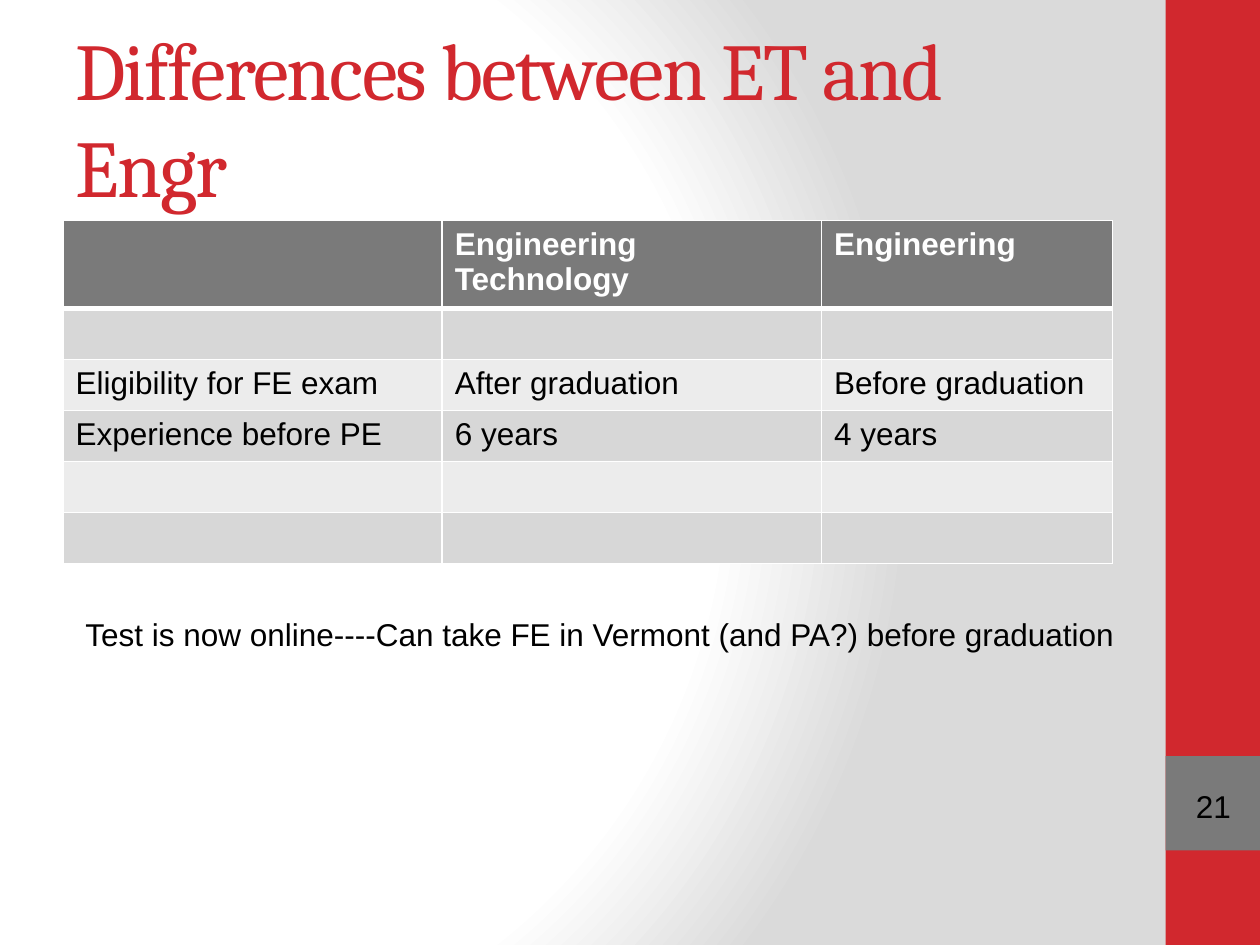
from typing import NamedTuple

from pptx import Presentation
from pptx.dml.color import RGBColor
from pptx.enum.shapes import MSO_SHAPE
from pptx.enum.text import MSO_ANCHOR, PP_ALIGN
from pptx.oxml import parse_xml
from pptx.oxml.ns import nsdecls
from pptx.util import Inches, Pt

COLORS = {
    "red": "D1282E", "gray": "7A7A7A", "white": "FFFFFF", "black": "000000",
    "backdrop": "DADADA", "dark_band": "D7D7D7", "light_band": "ECECEC",
}


class Box(NamedTuple):
    left: float
    top: float
    width: float
    height: float

    def lengths(self) -> list:
        return [Inches(v) for v in self]


class Style(NamedTuple):
    size: float = 18
    font: str = "Arial"
    color: str = "black"
    bold: bool = False


BODY = Style()
HEADER = Style(color="white", bold=True)
TITLE = Style(46, "Cambria", "red")

COLUMN_WIDTHS = (3.01, 3.01, 2.31)
ROWS = (
    ("", "Engineering Technology", "Engineering"),
    ("", "", ""),
    ("Eligibility for FE exam", "After graduation", "Before graduation"),
    ("Experience before PE", "6 years", "4 years"),
    ("", "", ""),
    ("", "", ""),
)


def rgb(name: str) -> RGBColor:
    return RGBColor.from_string(COLORS[name])


def write(tf, text: str, style: Style):
    p = tf.paragraphs[0]
    p.text = text
    p.font.size, p.font.name, p.font.bold = Pt(style.size), style.font, style.bold
    p.font.color.rgb = rgb(style.color)
    return p


def set_background(s) -> None:
    """Fill the slide with a circular gradient centred left of the middle."""
    stops = "".join(
        f'<a:gs pos="{pos * 1000}"><a:srgbClr val="{COLORS[name]}"/></a:gs>'
        for pos, name in ((0, "white"), (75, "white"), (100, "backdrop")))
    s._element.cSld.insert(0, parse_xml(
        f'<p:bg {nsdecls("p", "a")}><p:bgPr><a:gradFill rotWithShape="1">'
        f'<a:gsLst>{stops}</a:gsLst><a:path path="circle">'
        '<a:fillToRect l="20000" t="50000" r="100000" b="50000"/></a:path>'
        '</a:gradFill><a:effectLst/></p:bgPr></p:bg>'))


def add_panel(s, box: Box, color: str) -> None:
    sp = s.shapes.add_shape(MSO_SHAPE.RECTANGLE, *box.lengths())
    sp.shadow.inherit = False
    sp.fill.solid()
    sp.fill.fore_color.rgb = rgb(color)
    sp.line.fill.background()


def add_text(s, box: Box, text: str, style: Style, anchor=MSO_ANCHOR.TOP):
    tf = s.shapes.add_textbox(*box.lengths()).text_frame
    tf.word_wrap = True
    tf.vertical_anchor = anchor
    return write(tf, text, style)


def add_page_number(s, box: Box, text: str) -> None:
    sp = s.shapes.add_shape(MSO_SHAPE.DOUBLE_BRACKET, *box.lengths())
    sp.shadow.inherit = False
    sp.adjustments[0] = 0.18
    sp.fill.background()
    sp.line.fill.background()
    tf = sp.text_frame
    tf.margin_left = tf.margin_right = tf.margin_top = tf.margin_bottom = 0
    tf.vertical_anchor = MSO_ANCHOR.MIDDLE
    write(tf, text, BODY).alignment = PP_ALIGN.CENTER


def set_borders(cell, bottom: float, top: float) -> None:
    tcPr = cell._tc.get_or_add_tcPr()
    sides = {"lnL": 1, "lnR": 1, "lnT": top, "lnB": bottom}
    for i, (side, width) in enumerate(sides.items()):
        tcPr.insert(i, parse_xml(
            f'<a:{side} {nsdecls("a")} w="{Pt(width)}"><a:solidFill>'
            f'<a:srgbClr val="{COLORS["white"]}"/></a:solidFill></a:{side}>'))


def add_comparison_table(s, box: Box) -> None:
    table = s.shapes.add_table(len(ROWS), len(COLUMN_WIDTHS), *box.lengths()).table
    for column, width in zip(table.columns, COLUMN_WIDTHS):
        column.width = Inches(width)
    for i, row in enumerate(ROWS):
        fill = "gray" if i == 0 else "dark_band" if i % 2 else "light_band"
        for j, text in enumerate(row):
            cell = table.cell(i, j)
            cell.fill.solid()
            cell.fill.fore_color.rgb = rgb(fill)
            set_borders(cell, bottom=3 if i == 0 else 1, top=3 if i == 1 else 1)
            write(cell.text_frame, text, BODY if i else HEADER)


def main() -> None:
    prs = Presentation()
    prs.slide_width, prs.slide_height = Inches(10), Inches(7.5)
    s = prs.slides.add_slide(prs.slide_layouts[6])
    set_background(s)
    add_panel(s, Box(9.25, 0, 0.75, 7.5), "red")
    add_panel(s, Box(9.25, 6, 0.75, 0.75), "gray")
    title = add_text(s, Box(0.5, 0.3, 8.33, 1.25),
                     "Differences between ET and Engr", TITLE, MSO_ANCHOR.MIDDLE)
    title.runs[0].font._element.set("spc", "-100")
    add_comparison_table(s, Box(0.5, 1.75, sum(COLUMN_WIDTHS), 0.405 * len(ROWS)))
    add_page_number(s, Box(9.33, 6.18, 0.6, 0.43), "21")
    add_text(s, Box(0.58, 4.83, 8.5, 0.4),
             "Test is now online----Can take FE in Vermont (and PA?) before graduation",
             BODY)
    prs.save("out.pptx")


if __name__ == "__main__":
    main()
